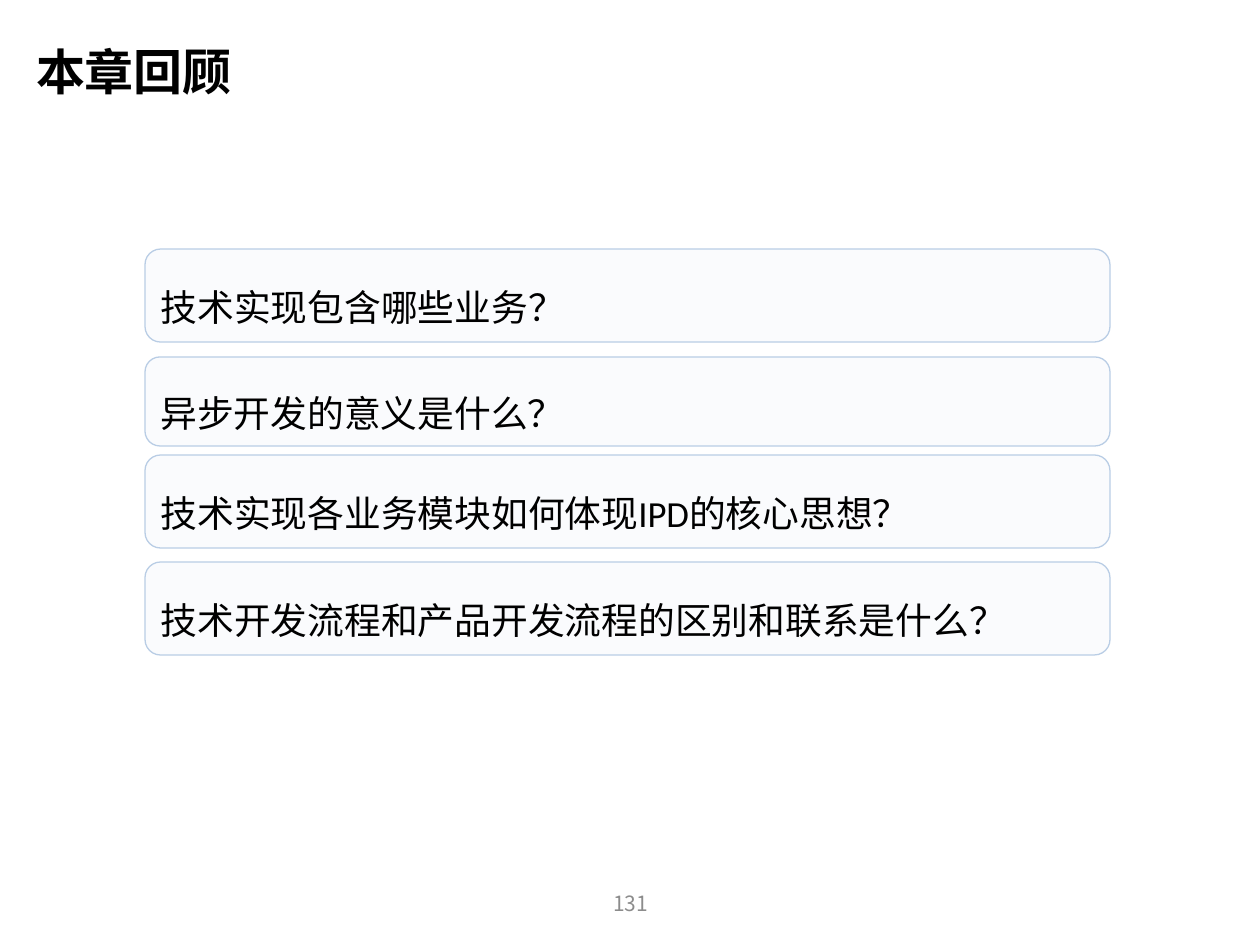
from lxml.etree import SubElement
from pptx import Presentation
from pptx.dml.color import RGBColor
from pptx.enum.shapes import MSO_SHAPE as Shape
from pptx.enum.text import MSO_ANCHOR as Anchor, PP_ALIGN as Align
from pptx.oxml.ns import qn
from pptx.util import Pt

EMU_PER_PX = 914400 / 126
COLORS = {"text": "000000", "number": "8C8C8C", "card": "DCE6F2", "border": "B9CDE5"}
CJK_FONT = "Noto Sans CJK SC"
CARD_LEFT, CARD_WIDTH = 145, 965
HANGING_INDENT = 55

# Top, height and wording of each review question
QUESTIONS = [
    (249, 93, "技术实现包含哪些业务？"),
    (357, 89, "异步开发的意义是什么？"),
    (455, 93, "技术实现各业务模块如何体现IPD的核心思想？"),
    (562, 93, "技术开发流程和产品开发流程的区别和联系是什么？"),
]


def px(length):
    return round(length * EMU_PER_PX)


def color(name):
    return RGBColor.from_string(COLORS[name])


def write_text(shape, text, size, font, color_name="text", bold=False,
               align=Align.LEFT, line_spacing=1.0):
    frame = shape.text_frame
    frame.word_wrap = True
    frame.vertical_anchor = Anchor.MIDDLE
    frame.margin_left = frame.margin_right = px(11)
    frame.margin_top = frame.margin_bottom = px(5)
    paragraph = frame.paragraphs[0]
    paragraph.alignment = align
    paragraph.line_spacing = line_spacing
    run = paragraph.add_run()
    run.text = text
    run.font.size = Pt(size)
    run.font.name = font
    run.font.bold = bold
    run.font.color.rgb = color(color_name)
    SubElement(run.font._element, qn("a:ea")).set("typeface", CJK_FONT)
    return paragraph


def add_label(slide, left, top, width, height, text, size, **style):
    box = slide.shapes.add_textbox(px(left), px(top), px(width), px(height))
    write_text(box, text, size, CJK_FONT, **style)


def add_question(slide, top, height, text):
    card = slide.shapes.add_shape(
        Shape.ROUNDED_RECTANGLE, px(CARD_LEFT), px(top), px(CARD_WIDTH), px(height))
    card.shadow.inherit = False
    card.adjustments[0] = 0.167
    card.fill.solid()
    card.fill.fore_color.rgb = color("card")
    # Mostly transparent fill
    fill_color = card._element.spPr.find(qn("a:solidFill")).find(qn("a:srgbClr"))
    SubElement(fill_color, qn("a:alpha")).set("val", "14000")
    card.line.color.rgb = color("border")
    card.line.width = Pt(0.75)
    paragraph = write_text(card, text, 21, "Calibri", line_spacing=1.5)
    properties = paragraph._p.get_or_add_pPr()
    properties.set("marL", str(px(HANGING_INDENT)))
    properties.set("indent", str(-px(HANGING_INDENT)))


def main():
    presentation = Presentation()
    presentation.slide_width, presentation.slide_height = px(1260), px(945)
    slide = presentation.slides.add_slide(presentation.slide_layouts[6])

    # Title
    add_label(slide, 25, 35, 1152, 79, "本章回顾", 28, bold=True, line_spacing=0.9)

    # Review questions
    for top, height, text in QUESTIONS:
        add_question(slide, top, height, text)

    # Page number
    add_label(slide, 489, 878, 283, 50, "131", 12, color_name="number", align=Align.CENTER)

    presentation.save("out.pptx")


if __name__ == "__main__":
    main()
